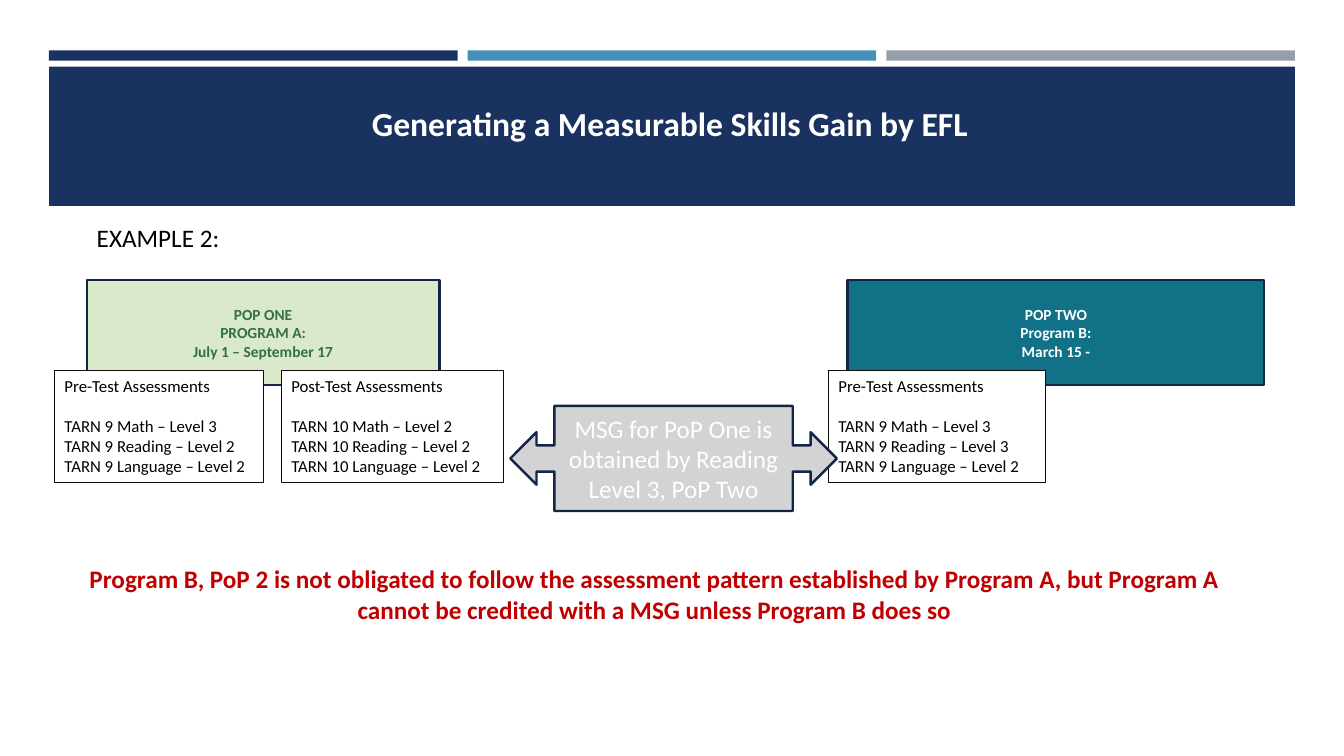
from pptx import Presentation
from pptx.dml.color import RGBColor
from pptx.enum.shapes import MSO_SHAPE
from pptx.enum.text import MSO_ANCHOR, PP_ALIGN
from pptx.util import Pt

NAVY, EDGE, WHITE, BLACK = "1A3260", "132547", "FFFFFF", "000000"


def tint(part, color):
    """Give a fill or font color a hex value."""
    part.rgb = RGBColor.from_string(color)


def place(shape, box):
    """Move a shape to a box given in points."""
    shape.left, shape.top, shape.width, shape.height = map(Pt, box)


def write(shape, text, size, color, bold=False, align=PP_ALIGN.CENTER,
          anchor=MSO_ANCHOR.TOP):
    """Set and format the text of a shape."""
    frame = shape.text_frame
    frame.word_wrap = True
    frame.vertical_anchor = anchor
    frame.text = text
    for para in frame.paragraphs:
        para.alignment = align
        for run in para.runs:
            font = run.font
            font.name, font.size, font.bold = "Calibri", Pt(size), bold
            tint(font.color, color)


def block(slide, box, fill, line=None, width=1.75, kind=MSO_SHAPE.RECTANGLE):
    """Add a filled shape with an optional outline."""
    shape = slide.shapes.add_shape(kind, *map(Pt, box))
    shape.shadow.inherit = False
    shape.fill.solid()
    tint(shape.fill.fore_color, fill)
    if line:
        tint(shape.line.color, line)
        shape.line.width = Pt(width)
    else:
        shape.line.fill.background()
    return shape


def label(slide, box, text, **style):
    """Add a wrapped text box."""
    note = slide.shapes.add_textbox(*map(Pt, box))
    write(note, text, 18, **style)


def head(slide, box, text):
    """Draw three strips and the title banner inside a box."""
    left, top, width, height = box
    gap, strip = 7.2, 7.4
    part = (width - 2 * gap) / 3
    for i, color in enumerate((NAVY, "4590B8", "969FA7")):
        block(slide, (left + i * (part + gap), top, part, strip), color)
    block(slide, (left, top + 11.6, width, height - 11.6), NAVY)
    title = slide.shapes.title
    place(title, (left + 4, top + 33.8, width - 11, 36))
    write(title, text, 24, WHITE, bold=True)
    title.element.getparent().append(title.element)


def period(slide, box, text, fill, color, tests):
    """Draw a period of participation with its test cards."""
    left, top, width, height = box
    shape = block(slide, box, fill, EDGE)
    write(shape, text, 11, color, bold=True, anchor=MSO_ANCHOR.MIDDLE)
    for shift, wide, name, form, levels in tests:
        card = block(slide, (left + shift, top + 64.8, wide, 80),
                     WHITE, "0D0D0D", 0.75)
        skills = zip(("Math", "Reading", "Language"), levels)
        rows = [f"TARN {form} {skill} – Level {level}"
                for skill, level in skills]
        write(card, "\n".join([f"{name}-Test Assessments", *rows]),
              12, BLACK, align=PP_ALIGN.LEFT)
        card.text_frame.paragraphs[0].space_after = Pt(14)


def callout(slide, box, text):
    """Draw the two-way arrow between the periods."""
    shape = block(slide, box, "D3D3D3", EDGE,
                  kind=MSO_SHAPE.LEFT_RIGHT_ARROW_CALLOUT)
    for i, value in enumerate((0.25, 0.25, 0.25, 0.73)):
        shape.adjustments[i] = value
    write(shape, text, 18, WHITE, anchor=MSO_ANCHOR.MIDDLE)


def main():
    """Build and save the slide."""
    deck = Presentation()
    deck.slide_width, deck.slide_height = Pt(960), Pt(540)
    slide = deck.slides.add_slide(deck.slide_layouts[5])
    head(slide, (35, 36, 890, 111),
         "Generating a Measurable Skills Gain by EFL")
    label(slide, (62, 155.5, 245.5, 30), "EXAMPLE 2:",
          color=BLACK, align=PP_ALIGN.LEFT)
    period(slide, (62, 200.2, 252, 75),
           "POP ONE\nPROGRAM A:\nJuly 1 – September 17", "DAE9C9", "327047",
           [(-23, 149, "Pre", 9, (3, 2, 2)),
            (139, 158.5, "Post", 10, (2, 2, 2))])
    period(slide, (605.5, 200.2, 297.5, 75),
           "POP TWO\nProgram B:\nMarch 15 -", "117186", WHITE,
           [(-13.7, 155, "Pre", 9, (3, 3, 2))])
    callout(slide, (364.5, 290, 233.3, 75),
            "MSG for PoP One is obtained by Reading Level 3, PoP Two")
    label(slide, (46, 399, 843, 51),
          "Program B, PoP 2 is not obligated to follow the assessment pattern "
          "established by Program A, but Program A cannot be credited with a "
          "MSG unless Program B does so", color="C00000", bold=True)
    deck.save("out.pptx")


if __name__ == "__main__":
    main()
